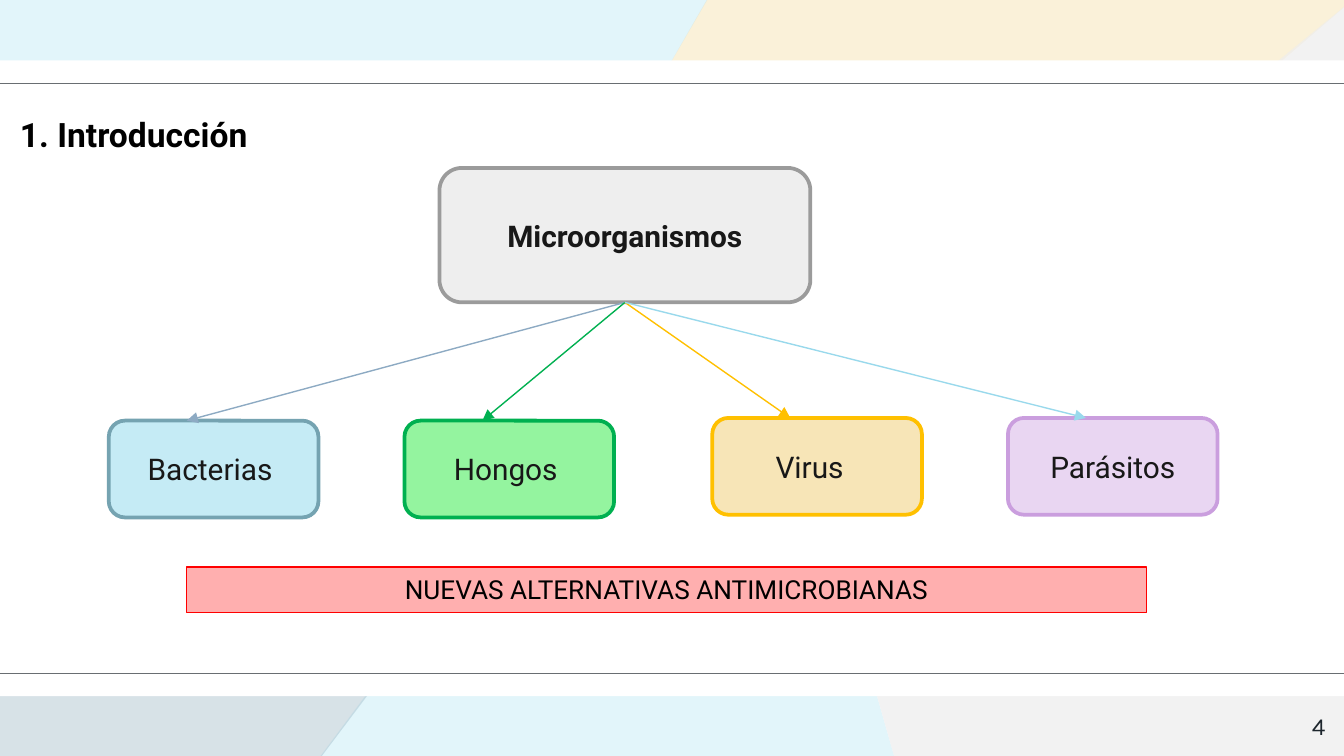
from lxml import etree
from pptx import Presentation
from pptx import util as u
from pptx.dml import color
from pptx.enum import shapes, text
from pptx.oxml import ns

COLORS = {
    "white": "FFFFFF", "black": "000000", "ink": "181818", "number": "1D262D",
    "rule": "696E72", "sky": "9EDDEF", "sand": "F7E5B7", "slate": "96B3C1",
    "gray": "EEEEEE", "gray_line": "9B9B9B", "blue": "C5EBF5", "blue_line": "75A3B1",
    "blue_arrow": "8DAAC3", "green": "94F49F", "green_line": "00B050",
    "gold_line": "FFC000", "lilac": "E9D6F2", "lilac_line": "CA9EDE",
    "cyan_arrow": "99D9EC", "pink": "FFAFAF", "red": "FF0000",
}
RGB = {name: color.RGBColor.from_string(value) for name, value in COLORS.items()}

presentation = Presentation()
presentation.slide_width = u.Inches(10)
presentation.slide_height = u.Inches(10 * 9 / 16)
slide = presentation.slides.add_slide(presentation.slide_layouts[6])


def write(shape, words, size, ink="ink", bold=False, align="CENTER", font="Roboto", anchor="MIDDLE"):
    frame = shape.text_frame
    frame.word_wrap = True
    frame.vertical_anchor = text.MSO_ANCHOR[anchor]
    frame.text = words
    paragraph = frame.paragraphs[0]
    paragraph.alignment = text.PP_ALIGN[align]
    run_font = paragraph.runs[0].font
    run_font.name, run_font.size, run_font.bold = font, u.Pt(size), bold
    run_font.color.rgb = RGB[ink]


def add_box(preset, place, fill, line=None, width=2):
    shape = slide.shapes.add_shape(shapes.MSO_SHAPE[preset], *map(u.Inches, place))
    shape.shadow.inherit = False
    shape.fill.solid()
    shape.fill.fore_color.rgb = RGB[fill]
    if line:
        shape.line.color.rgb = RGB[line]
        shape.line.width = u.Pt(width)
    else:
        shape.line.fill.background()
    return shape


backdrop = [
    ("sky", 29, [(2.21, 5.86), (6.72, 5.86), (5.47, 1.49)]),
    ("sand", 52, [(10.1, -0.03), (10.1, -0.14), (5.34, -0.14), (4.33, 1.61), (9.17, 0.77)]),
    ("slate", 38, [(-0.08, 5.93), (-0.08, 3.21), (5.49, 1.52), (2.12, 5.99)]),
    ("sky", 29, [(-0.07, 3.21), (-0.07, -0.1), (5.32, -0.1), (4.16, 1.89)]),
    ("gray", 71, [(6.72, 5.86), (10.1, 5.86), (10.1, -0.03), (6, 3.33)]),
]
for fill, opacity, points in backdrop:
    corners = [(u.Inches(x), u.Inches(y)) for x, y in points]
    builder = slide.shapes.build_freeform(*corners[0])
    builder.add_line_segments(corners[1:], close=True)
    polygon = builder.convert_to_shape()
    polygon.shadow.inherit = False
    polygon.fill.solid()
    polygon.fill.fore_color.rgb = RGB[fill]
    polygon.line.fill.background()
    fill_color = polygon._element.spPr.find(ns.qn("a:solidFill"))[0]
    etree.SubElement(fill_color, ns.qn("a:alpha"), val=str(opacity * 1000))

add_box("RECTANGLE", (-0.03, 0.45, 10.05, 4.73), "white")

connectors = []
for y in (0.62, 5.01):
    rule = slide.shapes.add_connector(
        shapes.MSO_CONNECTOR.STRAIGHT, u.Inches(-0.12), u.Inches(y), u.Inches(10.04), u.Inches(y))
    connectors.append((rule, "rule"))

root = add_box("ROUNDED_RECTANGLE", (3.27, 1.25, 2.76, 1), "gray", "gray_line")
write(root, "Microorganismos", 16, bold=True)

groups = [
    ("Bacterias", 0.81, 3.13, 0.15, "blue", "blue_line", "blue_arrow"),
    ("Hongos", 3.01, 3.13, 0.15, "green", "green_line", "green_line"),
    ("Virus", 5.3, 3.11, 0.21, "sand", "gold_line", "gold_line"),
    ("Parásitos", 7.5, 3.11, 0.1, "lilac", "lilac_line", "cyan_arrow"),
]
for name, left, top, right_inset, fill, line, arrow_color in groups:
    box = add_box("ROUNDED_RECTANGLE", (left, top, 1.56, 0.72), fill, line)
    write(box, name, 16)
    box.text_frame.margin_right = u.Inches(right_inset)

for name, left, top, right_inset, fill, line, arrow_color in groups:
    arrow = slide.shapes.add_connector(
        shapes.MSO_CONNECTOR.STRAIGHT, u.Inches(4.65), u.Inches(2.25), u.Inches(left + 0.58), u.Inches(top))
    arrow.begin_connect(root, 2)
    connectors.append((arrow, arrow_color))

for connector, line in connectors:
    connector.line.color.rgb = RGB[line]
    connector.line.width = u.Pt(0.75)
    properties = connector._element.spPr
    if line != "rule":
        etree.SubElement(properties.find(ns.qn("a:ln")), ns.qn("a:tailEnd"), type="triangle")
    etree.SubElement(properties, ns.qn("a:effectLst"))

labels = [
    ("4", (9.36, 5.19, 0.6, 0.43), 13, "number", False, "RIGHT", "Karla", "TOP"),
    ("1. Introducción", (0.05, 0.68, 6.81, 0.64), 18, "black", True, "LEFT", "Roboto", "MIDDLE"),
]
for words, place, *style in labels:
    label = slide.shapes.add_textbox(*map(u.Inches, place))
    write(label, words, *style)
    label.text_frame.margin_top = label.text_frame.margin_bottom = u.Inches(0.1)

banner = add_box("RECTANGLE", (1.39, 4.22, 7.14, 0.34), "pink", "red", 0.75)
write(banner, "NUEVAS ALTERNATIVAS ANTIMICROBIANAS", 14, "black", anchor="TOP")

presentation.save("out.pptx")
